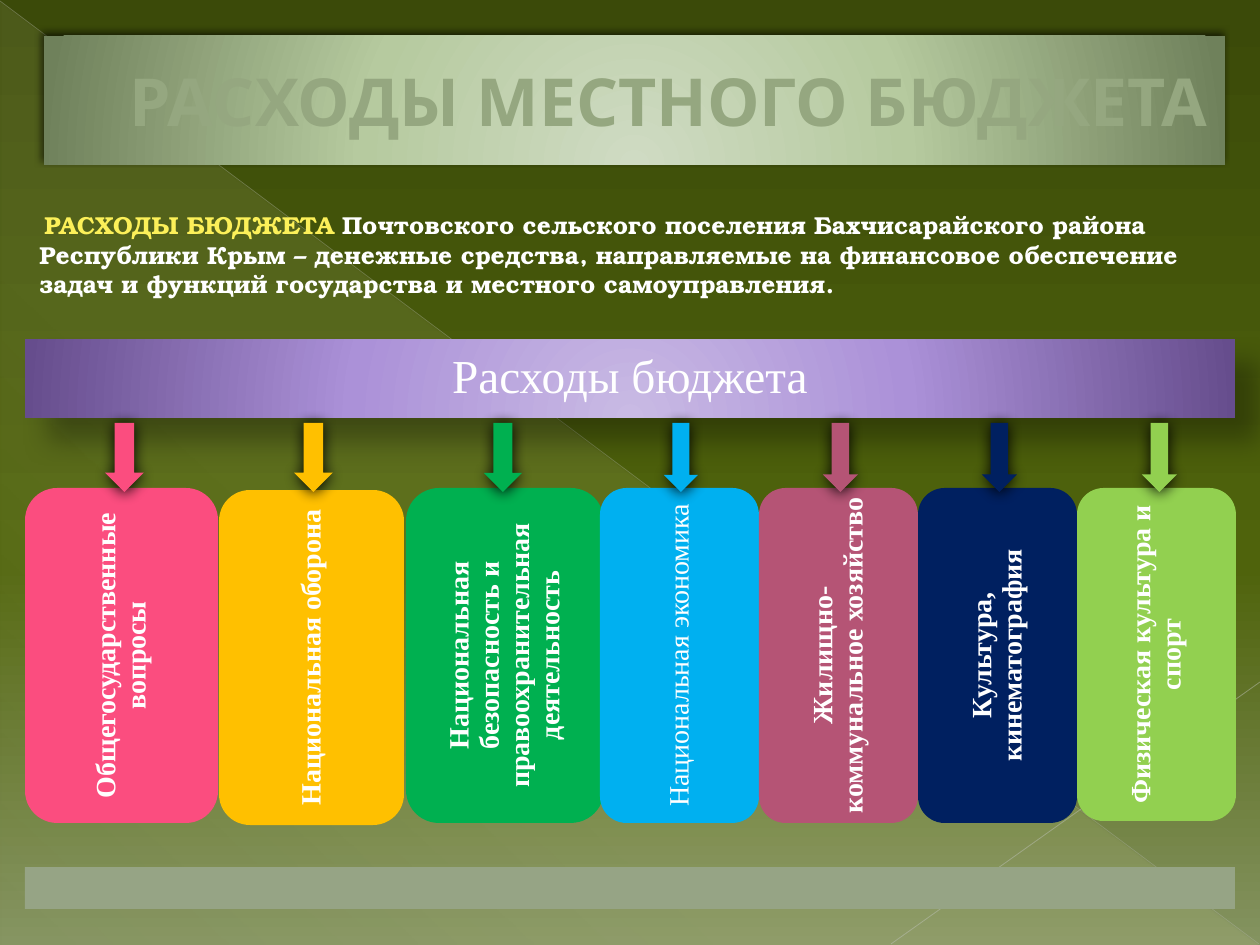
"""Build the local budget spending slide."""
from dataclasses import dataclass

from lxml import etree
from pptx import Presentation
from pptx.dml.color import RGBColor
from pptx.enum.shapes import MSO_CONNECTOR, MSO_SHAPE
from pptx.enum.text import MSO_ANCHOR, PP_ALIGN
from pptx.oxml.ns import qn
from pptx.util import Pt

RECT = MSO_SHAPE.RECTANGLE
ROUND = MSO_SHAPE.ROUNDED_RECTANGLE
CARD = MSO_SHAPE.FLOWCHART_ALTERNATE_PROCESS
ARROW = MSO_SHAPE.DOWN_ARROW
WEDGE = MSO_SHAPE.RIGHT_TRIANGLE
LINE = MSO_CONNECTOR.STRAIGHT
MID = MSO_ANCHOR.MIDDLE
CENTER = PP_ALIGN.CENTER


@dataclass(frozen=True)
class Theme:
    """Colours, fonts and type sizes."""
    white: str = "FFFFFF"
    title: str = "95A780"
    key: str = "FCF059"
    foot: str = "96A485"
    back: tuple = ((0, "3B4A09"), (60, "4F630C"), (100, "849360"))
    glow: tuple = ((0, "FEFAC9", 10), (70, "FEFAC9", 8), (100, "FEFAC9", 1))
    green: tuple = ((0, "CFDBC3"), (46, "B6CA9F"), (100, "6F815B"))
    violet: tuple = ((0, "C9BAE4"), (46, "AB91D8"), (100, "664D8D"))
    head_font: str = "League Spartan"
    body_font: str = "TeX Gyre Bonum"
    card_font: str = "Times New Roman"
    head_size: float = 37.8
    body_size: float = 14
    bar_size: float = 27
    card_size: float = 16


THEME = Theme()
TITLE = "РАСХОДЫ МЕСТНОГО БЮДЖЕТА"
INTRO = (
    ("РАСХОДЫ БЮДЖЕТА ", THEME.key),
    ("Почтовского сельского поселения Бахчисарайского района Республики Крым "
     "– денежные средства, направляемые на финансовое обеспечение задач и "
     "функций государства и местного самоуправления.", THEME.white),
)
BAR = "Расходы бюджета"
CARDS = [
    ("Общегосударственные вопросы", "FB4D7F", CARD, True, (25, 488, 193, 335), (105, 39)),
    ("Национальная оборона", "FFC000", CARD, True, (219, 490, 185, 335), (294, 39)),
    ("Национальная безопасность и правоохранительная деятельность", "00B050",
     CARD, True, (406, 488, 198, 335), (484, 38)),
    ("Национальная экономика", "00B0F0", CARD, False, (600, 488, 159, 335), (664, 34)),
    ("Жилищно-коммунальное хозяйство", "B55475", CARD, True,
     (759, 488, 159, 335), (823, 35)),
    ("Культура, кинематография", "002060", ROUND, True, (918, 488, 159, 335), (982, 35)),
    ("Физическая культура и спорт", "92D050", CARD, True,
     (1077, 488, 159, 333), (1142, 35)),
]
RAYS = [
    ((0, 1, 1259, 944), "BABDB3", 0.39, 35),
    ((1260, 682, 891, 944), "C1C4BC", 0.47, 45),
]
ARROW_TOP, ARROW_TALL = 423, 69
BAR_SHADE = (30, 15, 18, 45)
HEAD_SHADE = (60, 4, 3, 245)
ARROW_SHADE = (100, 8.5, 1, 90)


def emu(*vals):
    return [round(v * 914400 / 126) for v in vals]


def node(up, tag, **attrs):
    part = etree.SubElement(up, qn("a:" + tag))
    for key, val in attrs.items():
        part.set(key, str(val))
    return part


def tint(up, color, alpha=100):
    part = node(up, "srgbClr", val=color)
    if alpha < 100:
        node(part, "alpha", val=alpha * 1000)


def blend(props, stops, angle=None):
    """Swap the solid fill in props for a gradient."""
    old = props.find(qn("a:solidFill"))
    grad = etree.Element(qn("a:gradFill"), rotWithShape="1")
    stop_list = node(grad, "gsLst")
    for pos, *color in stops:
        tint(node(stop_list, "gs", pos=pos * 1000), *color)
    if angle is None:
        way = node(grad, "path", path="circle")
        node(way, "fillToRect", l=50000, t=155000, r=50000, b=-55000)
    else:
        node(grad, "lin", ang=angle * 60000, scaled=0)
    props.replace(old, grad)


def shade(shape, alpha, blur, dist, angle):
    effects = shape._element.spPr.find(qn("a:effectLst"))
    drop = node(effects, "outerShdw", blurRad=Pt(blur), dist=Pt(dist),
                dir=angle * 60000, algn="ctr", rotWithShape=0)
    tint(drop, "000000", alpha)


def block(slide, kind, box, color):
    shape = slide.shapes.add_shape(kind, *emu(*box))
    shape.shadow.inherit = False
    shape.line.fill.background()
    shape.fill.solid()
    shape.fill.fore_color.rgb = RGBColor.from_string(color)
    return shape


def style(run, font, size, color, bold):
    run.font.name = font
    run.font.size = Pt(size)
    run.font.bold = bold
    run.font.color.rgb = RGBColor.from_string(color)


def label(shape, text, font, size, color, bold, inset=0):
    frame = shape.text_frame
    frame.word_wrap = True
    frame.vertical_anchor = MID
    frame.margin_left = frame.margin_right = emu(inset)[0]
    frame.margin_top = frame.margin_bottom = emu(inset)[0]
    frame.text = text
    para = frame.paragraphs[0]
    para.alignment = CENTER
    style(para.runs[0], font, size, color, bold)
    return para


def backdrop(slide):
    fill = slide.background.fill
    fill.solid()
    blend(slide.background._cSld.bg.bgPr, THEME.back, 90)
    wedge = block(slide, WEDGE, (1, 2, 1258, 943), THEME.white)
    blend(wedge._element.spPr, THEME.glow, 133)
    for ends, color, width, alpha in RAYS:
        ray = slide.shapes.add_connector(LINE, *emu(*ends))
        ray.line.color.rgb = RGBColor.from_string(color)
        ray.line.width = Pt(width)
        props = ray._element.spPr
        node(next(props.iter(qn("a:srgbClr"))), "alpha", val=alpha * 1000)
        node(props, "effectLst")


def intro(slide):
    frame = slide.shapes.add_textbox(*emu(-35, 204, 1240, 685)).text_frame
    frame.word_wrap = True
    para = frame.paragraphs[0]
    left, first = emu(62, 5)
    props = para._p.get_or_add_pPr()
    props.set("marL", str(left))
    props.set("indent", str(first))
    for text, color in INTRO:
        run = para.add_run()
        run.text = text
        style(run, THEME.body_font, THEME.body_size, color, True)


def main():
    deck = Presentation()
    deck.slide_width, deck.slide_height = emu(1260, 945)
    slide = deck.slides.add_slide(deck.slide_layouts[6])
    backdrop(slide)

    head = block(slide, RECT, (44, 36, 1181, 129), THEME.white)
    blend(head._element.spPr, THEME.green)
    shade(head, *HEAD_SHADE)
    para = label(head, TITLE, THEME.head_font, THEME.head_size, THEME.title, True, 12)
    para._p.get_or_add_pPr().set("marL", str(emu(67)[0]))

    intro(slide)

    bar = block(slide, RECT, (25, 339, 1210, 79), THEME.white)
    blend(bar._element.spPr, THEME.violet)
    shade(bar, *BAR_SHADE)
    para = label(bar, BAR, THEME.card_font, THEME.bar_size, THEME.white, False, 14)
    para.line_spacing = 0.9

    for text, color, kind, bold, box, _ in CARDS:
        card = block(slide, kind, box, color)
        para = label(card, text, THEME.card_font, THEME.card_size, THEME.white, bold)
        para.line_spacing = 0.9
        card.text_frame._txBody.bodyPr.set("vert", "vert270")
    block(slide, RECT, (25, 867, 1210, 42), THEME.foot)
    for _, color, _, _, _, (left, wide) in CARDS:
        arrow = block(slide, ARROW, (left, ARROW_TOP, wide, ARROW_TALL), color)
        shade(arrow, *ARROW_SHADE)

    deck.save("out.pptx")


if __name__ == "__main__":
    main()
